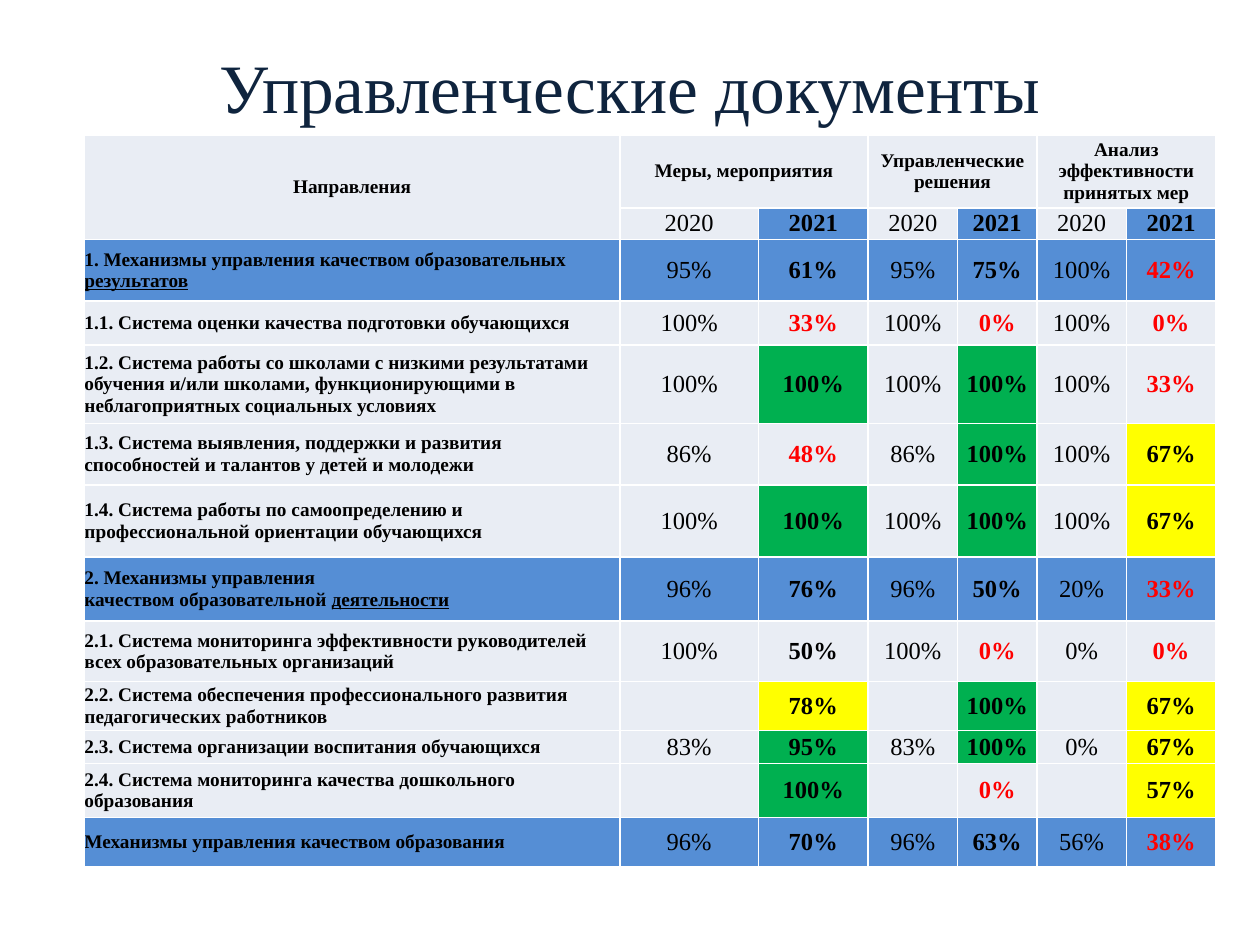
from dataclasses import dataclass

from lxml import etree
from pptx import Presentation
from pptx.dml.color import RGBColor
from pptx.enum.text import MSO_ANCHOR, PP_ALIGN
from pptx.oxml.ns import qn
from pptx.util import Inches, Pt

CENTER, LEFT = PP_ALIGN.CENTER, PP_ALIGN.LEFT
MIDDLE = MSO_ANCHOR.MIDDLE


@dataclass(frozen=True)
class Theme:
    font: str = "Times New Roman"
    title: str = "0F243E"
    text: str = "000000"
    low: str = "FF0000"
    plain: str = "E9EDF4"
    section: str = "558ED5"
    good: str = "00B050"
    fair: str = "FFFF00"
    border: str = "FFFFFF"
    title_size: float = 39.6
    label_size: float = 11
    value_size: float = 14
    border_width: float = 1


THEME = Theme()

COLS = [4.25, 1.1, 0.87, 0.71, 0.63, 0.71, 0.71]
HEAD_HEIGHTS = [0.58, 0.25]
GROUPS = ["Меры, мероприятия", "Управленческие решения",
          "Анализ эффективности принятых мер"]

# Height, is a section, label paragraphs, values as 2020/2021 pairs.
# An underscore before a run marks it as underlined.
ROWS = [
    (0.49, True, [["1. Механизмы управления качеством образовательных ", "_результатов"]],
     [95, 61, 95, 75, 100, 42]),
    (0.35, False, [["1.1. Система оценки качества подготовки обучающихся"]],
     [100, 33, 100, 0, 100, 0]),
    (0.62, False, [["1.2. Система работы со школами с низкими результатами обучения и/или "
                    "школами, функционирующими в неблагоприятных социальных условиях"]],
     [100, 100, 100, 100, 100, 33]),
    (0.49, False, [["1.3. Система выявления, поддержки и развития способностей "
                    "и талантов у детей и молодежи"]],
     [86, 48, 86, 100, 100, 67]),
    (0.57, False, [["1.4. Система работы по самоопределению и профессиональной "
                    "ориентации обучающихся"]],
     [100, 100, 100, 100, 100, 67]),
    (0.51, True, [["2. Механизмы управления"],
                  ["качеством образовательной ", "_деятельности"]],
     [96, 76, 96, 50, 20, 33]),
    (0.48, False, [["2.1. Система мониторинга эффективности руководителей "
                    "всех образовательных организаций"]],
     [100, 50, 100, 0, 0, 0]),
    (0.39, False, [["2.2. Система обеспечения профессионального развития "
                    "педагогических работников"]],
     [None, 78, None, 100, None, 67]),
    (0.26, False, [["2.3. Система организации воспитания обучающихся"]],
     [83, 95, 83, 100, 0, 67]),
    (0.43, False, [["2.4. Система мониторинга качества дошкольного образования"]],
     [None, 100, None, 0, None, 57]),
    (0.39, True, [["Механизмы управления качеством образования"]],
     [96, 70, 96, 63, 56, 38]),
]


def add_run(p, text, size, color=THEME.text, bold=False, underline=False):
    r = p.add_run()
    r.text = text
    r.font.name = THEME.font
    r.font.size = Pt(size)
    r.font.bold = bold
    r.font.color.rgb = RGBColor.from_string(color)
    if underline:
        r.font.underline = True


def style_cell(cell, fill):
    cell.margin_left = cell.margin_right = cell.margin_top = cell.margin_bottom = 0
    cell.vertical_anchor = MIDDLE
    cell.fill.solid()
    cell.fill.fore_color.rgb = RGBColor.from_string(fill)
    # Borders come before the fill in the cell properties
    tc_pr = cell._tc.get_or_add_tcPr()
    for i, side in enumerate(("a:lnL", "a:lnR", "a:lnT", "a:lnB")):
        ln = etree.Element(qn(side), w=str(Pt(THEME.border_width)))
        solid = etree.SubElement(ln, qn("a:solidFill"))
        etree.SubElement(solid, qn("a:srgbClr"), val=THEME.border)
        tc_pr.insert(i, ln)


def fill_cell(cell, paragraphs, size, align=CENTER, color=THEME.text, bold=True):
    tf = cell.text_frame
    for i, runs in enumerate(paragraphs):
        p = tf.add_paragraph() if i else tf.paragraphs[0]
        p.alignment = align
        for text in runs:
            add_run(p, text.removeprefix("_"), size, color, bold, text.startswith("_"))


def rate(value, section):
    """Fill and text colour of a 2021 result."""
    color = THEME.low if value < 50 else THEME.text
    if section:
        return THEME.section, color
    if value >= 95:
        return THEME.good, color
    return (THEME.fair if value > 50 else THEME.plain), color


def add_title(slide, left, top, width, height):
    box = slide.shapes.add_textbox(left, top, width, height)
    tf = box.text_frame
    tf.word_wrap = True
    tf.vertical_anchor = MIDDLE
    p = tf.paragraphs[0]
    p.alignment = CENTER
    add_run(p, "Управленческие документы", THEME.title_size, THEME.title)


def add_header(table):
    for row in range(2):
        for col in range(len(COLS)):
            is_2021 = row == 1 and col and col % 2 == 0
            style_cell(table.cell(row, col), THEME.section if is_2021 else THEME.plain)
    table.cell(0, 0).merge(table.cell(1, 0))
    fill_cell(table.cell(0, 0), [["Направления"]], THEME.label_size)
    for i, group in enumerate(GROUPS):
        col = 1 + 2 * i
        table.cell(0, col).merge(table.cell(0, col + 1))
        fill_cell(table.cell(0, col), [[group]], THEME.label_size)
        fill_cell(table.cell(1, col), [["2020"]], THEME.value_size, bold=False)
        fill_cell(table.cell(1, col + 1), [["2021"]], THEME.value_size)


def add_results_table(slide, left, top, width, height):
    heights = HEAD_HEIGHTS + [row[0] for row in ROWS]
    table = slide.shapes.add_table(len(heights), len(COLS), left, top, width, height).table
    table.first_row = table.horz_banding = False
    for column, w in zip(table.columns, COLS):
        column.width = Inches(w)
    for row, h in zip(table.rows, heights):
        row.height = Inches(h)
    add_header(table)

    # Directions and their yearly results
    for i, (_, section, label, values) in enumerate(ROWS, len(HEAD_HEIGHTS)):
        base = THEME.section if section else THEME.plain
        style_cell(table.cell(i, 0), base)
        fill_cell(table.cell(i, 0), label, THEME.label_size, LEFT)
        for j, value in enumerate(values, 1):
            is_2021 = j % 2 == 0
            fill, color = rate(value, section) if is_2021 else (base, THEME.text)
            style_cell(table.cell(i, j), fill)
            if value is not None:
                fill_cell(table.cell(i, j), [[f"{value}%"]], THEME.value_size,
                          color=color, bold=is_2021)


def main():
    prs = Presentation()
    prs.slide_width, prs.slide_height = Inches(10), Inches(7.5)
    slide = prs.slides.add_slide(prs.slide_layouts[6])
    add_results_table(slide, Inches(0.67), Inches(1.07), Inches(8.98), Inches(5.77))
    add_title(slide, Inches(0.5), Inches(0.3), Inches(9), Inches(0.77))
    prs.save("out.pptx")


if __name__ == "__main__":
    main()
